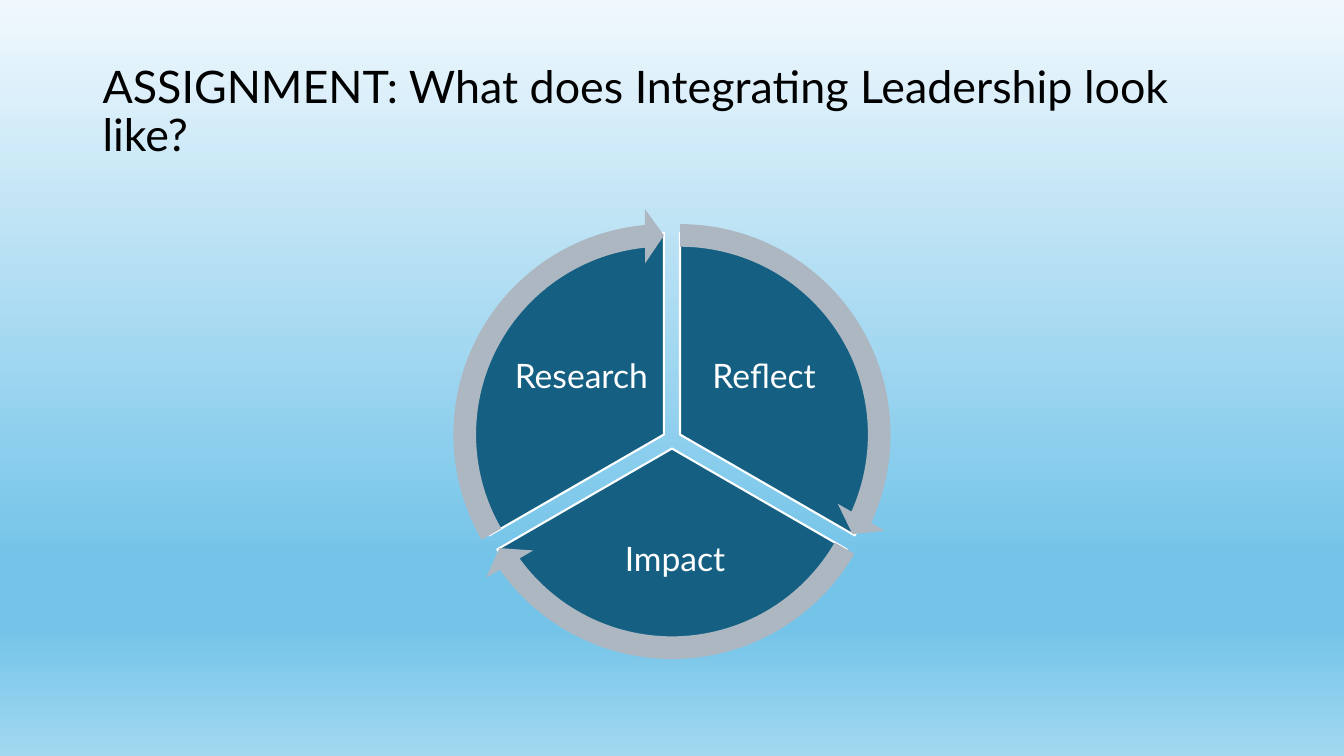
import math
from lxml import etree
from pptx import Presentation
from pptx import util as u
from pptx.dml.color import RGBColor
from pptx.enum import shapes, text
from pptx.oxml.ns import qn

BLACK = RGBColor(0x00, 0x00, 0x00)
WHITE = RGBColor(0xFF, 0xFF, 0xFF)
TEAL = RGBColor(0x15, 0x60, 0x82)
GREY = RGBColor(0xAC, 0xB7, 0xC1)
SKY = [
    (0, RGBColor(0xF0, 0xF8, 0xFD)),
    (74, RGBColor(0x74, 0xC4, 0xE9)),
    (83, RGBColor(0x74, 0xC4, 0xE9)),
    (100, RGBColor(0xA2, 0xD8, 0xF0)),
]

deck = Presentation()
deck.slide_width = u.Inches(13.33)
deck.slide_height = u.Inches(7.5)
COL = deck.slide_width / 100
ROW = deck.slide_height / 100
slide = deck.slides.add_slide(deck.slide_layouts[6])

sky = slide.background.fill
sky.gradient()
sky.gradient_angle = 270
stops = next(slide.background._cSld.iter(qn("a:gsLst")))
for stop in list(stops):
    stops.remove(stop)
for percent, color in SKY:
    stop = etree.SubElement(stops, qn("a:gs"), pos=str(percent * 1000))
    etree.SubElement(stop, qn("a:srgbClr"), val=str(color))


def write(words, col, row, cols, rows, size, color, align, inset):
    box = slide.shapes.add_textbox(int(col * COL), int(row * ROW), int(cols * COL), int(rows * ROW))
    frame = box.text_frame
    frame.word_wrap = True
    frame.vertical_anchor = text.MSO_ANCHOR.MIDDLE
    frame.margin_left = frame.margin_right = u.Inches(inset)
    frame.margin_top = frame.margin_bottom = u.Inches(min(inset, 0.05))
    line = frame.paragraphs[0]
    line.text = words
    line.alignment = align
    line.line_spacing = 0.9
    line.font.name = "Lato"
    line.font.size = u.Pt(size)
    line.font.color.rgb = color


def add_sector(kind, center, diameter, fill, adjustments):
    x, y = center
    sector = slide.shapes.add_shape(
        kind, int(x - diameter / 2), int(y - diameter / 2), int(diameter), int(diameter))
    sector.shadow.inherit = False
    sector.fill.solid()
    sector.fill.fore_color.rgb = fill
    for index, value in enumerate(adjustments):
        sector.adjustments[index] = value
    return sector


write("ASSIGNMENT: What does Integrating Leadership look like?", 6.9, 5.3, 86.3, 19.3,
      size=32, color=BLACK, align=text.PP_ALIGN.LEFT, inset=0.1)

DEGREE = 0.6
GAP = 1.23 * ROW
steps = [
    ("Reflect", 270, (51.5, 42, 10.7, 15.9)),
    ("Impact", 30, (42.2, 67.2, 16.05, 14)),
    ("Research", 150, (37.9, 42, 10.7, 15.9)),
]
centers = {}
for step, start, label in steps:
    middle = math.radians(start + 60)
    centers[start] = (50 * COL + GAP * math.cos(middle), 58.1 * ROW + GAP * math.sin(middle))
    slice_ = add_sector(shapes.MSO_SHAPE.PIE, centers[start], 53.33 * ROW, TEAL,
                        [start * DEGREE, (start + 120) % 360 * DEGREE])
    slice_.line.color.rgb = WHITE
    slice_.line.width = u.Pt(1.5)
    write(step, *label, size=24, color=WHITE, align=text.PP_ALIGN.CENTER, inset=0.03)

for start, center in centers.items():
    head = (start + 114.54) % 360
    arrow = add_sector(shapes.MSO_SHAPE.CIRCULAR_ARROW, center, 59.87 * ROW, GREY,
                       [0.05, 5.46 * DEGREE, head * DEGREE, start * DEGREE, 0.06])
    arrow.line.fill.background()

deck.save("out.pptx")
